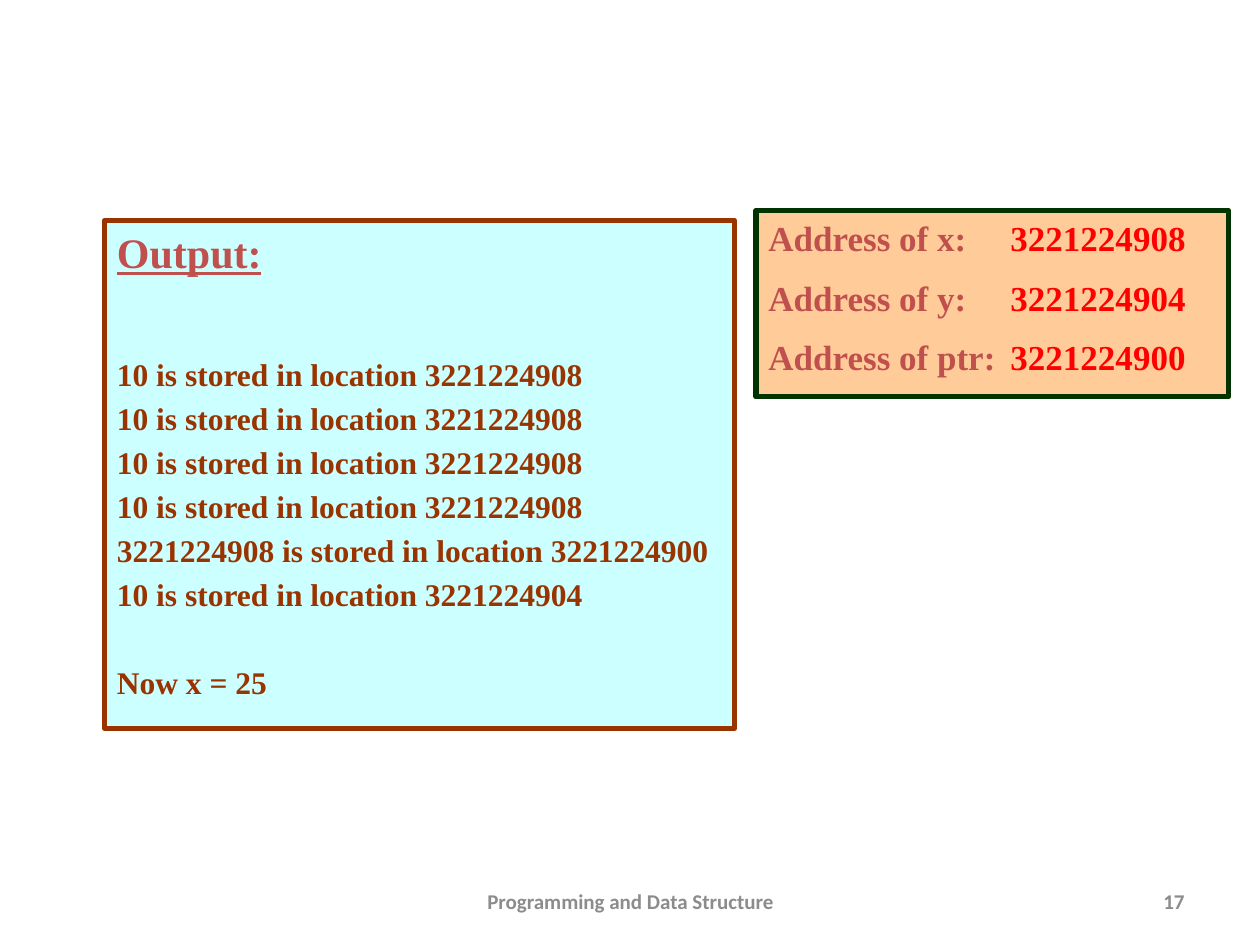
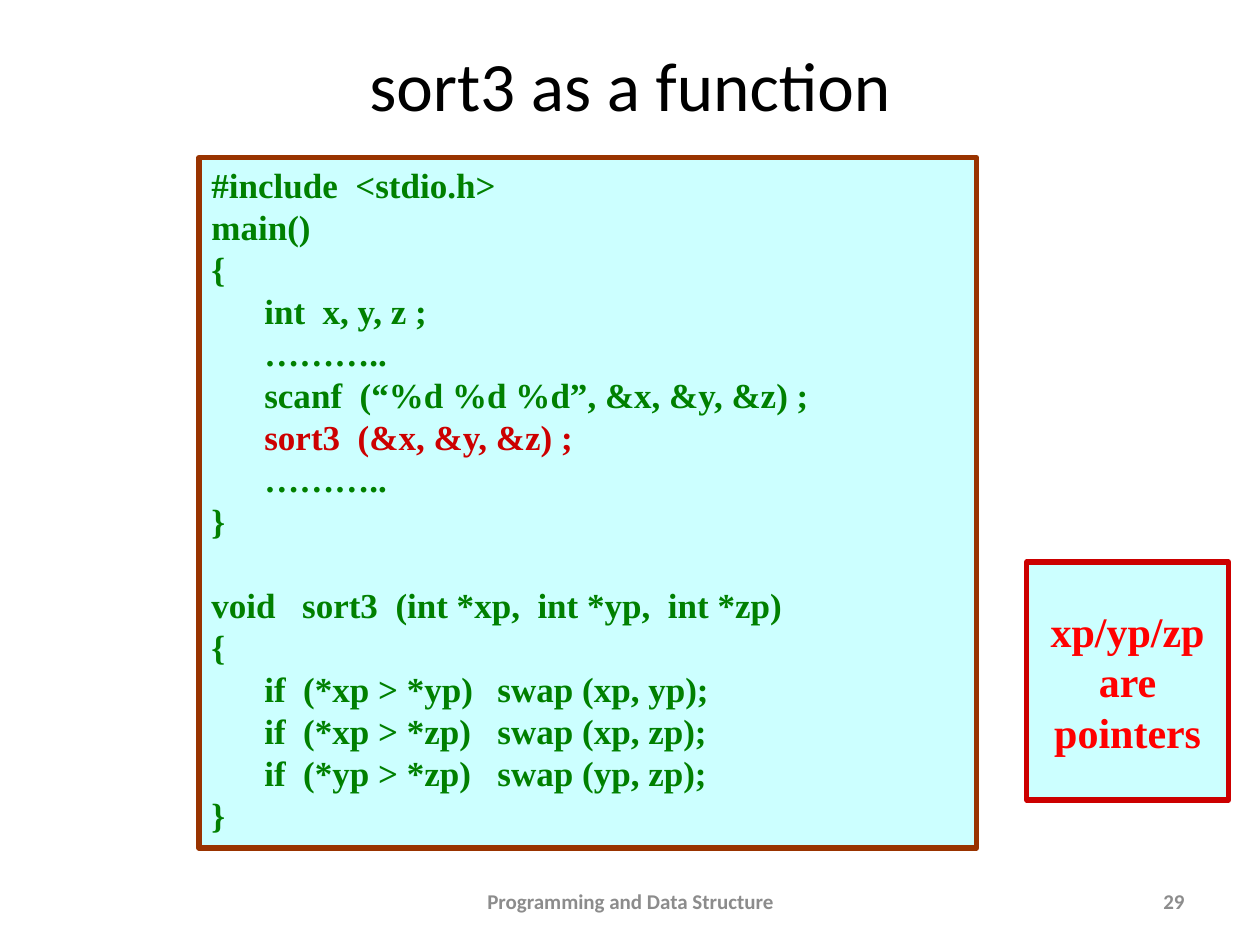
from lxml.etree import SubElement
from pptx import Presentation
from pptx.dml.color import RGBColor
from pptx.enum.shapes import MSO_SHAPE
from pptx.enum.text import MSO_ANCHOR as ANCHOR, MSO_AUTO_SIZE as AUTO_SIZE, PP_ALIGN as ALIGN
from pptx.oxml.ns import qn
from pptx.util import Inches, Pt

color = RGBColor.from_string

# Shared style
HEADING, BODY = "Calibri", "Times New Roman"
CYAN, PEACH = "CCFFFF", "FFCC99"
BROWN, DARK_GREEN, CODE_GREEN = "993300", "003300", "008000"
BRICK, RED, DARK_RED = "C0504D", "FF0000", "CC0000"
BLACK, GRAY = "000000", "8C8C8C"


def write(frame, *parts, size, font=BODY, bold=True, underline=False,
          align=ALIGN.LEFT, before=0, tabs=()):
    """Fill the next paragraph with (text, colour) parts."""
    paragraph = frame.paragraphs[-1]
    if paragraph.runs:
        paragraph = frame.add_paragraph()
    paragraph.alignment = align
    paragraph.space_before = Pt(before)
    if tabs:
        tab_list = SubElement(paragraph._p.get_or_add_pPr(), qn("a:tabLst"))
        for stop in tabs:
            SubElement(tab_list, qn("a:tab"), pos=str(Inches(stop)), algn="l")
    for text, text_color in parts:
        run = paragraph.add_run()
        run.text = text
        run.font.name = font
        run.font.size = Pt(size)
        run.font.bold = bold
        run.font.underline = underline
        run.font.color.rgb = color(text_color)


def add_box(slide, left, top, width, height, fill=None, line=None, anchor=ANCHOR.TOP, wrap=True):
    """Add a rectangle, framed if it has a fill, and return its text frame."""
    place = [Inches(length) for length in (left, top, width, height)]
    if fill:
        shape = slide.shapes.add_shape(MSO_SHAPE.RECTANGLE, *place)
        shape.shadow.inherit = False
        shape.fill.solid()
        shape.fill.fore_color.rgb = color(fill)
        shape.line.color.rgb = color(line)
        shape.line.width = Pt(3)
    else:
        shape = slide.shapes.add_textbox(*place)
    frame = shape.text_frame
    frame.word_wrap = wrap
    frame.vertical_anchor = anchor
    return frame


presentation = Presentation()
presentation.slide_width = Inches(10)
presentation.slide_height = Inches(7.5)
title_only, blank = presentation.slide_layouts[5], presentation.slide_layouts[6]
output_slide = presentation.slides.add_slide(blank)
sort_slide = presentation.slides.add_slide(title_only)

# Footers
for slide, number in ((output_slide, "17"), (sort_slide, "29")):
    for text, left, width, align in (
        ("Programming and Data Structure", 3.42, 3.17, ALIGN.CENTER),
        (number, 7.17, 2.33, ALIGN.RIGHT),
    ):
        footer = add_box(slide, left, 6.95, width, 0.4, anchor=ANCHOR.MIDDLE)
        write(footer, (text, GRAY), size=12, font=HEADING, align=align)

# Program output
output = add_box(output_slide, 0.83, 1.75, 5, 4.03, CYAN, BROWN)
write(output, ("Output:", BRICK), size=24, underline=True)
for text, before in (
    ("10 is stored in location 3221224908", 44.4),
    ("10 is stored in location 3221224908", 3.6),
    ("10 is stored in location 3221224908", 3.6),
    ("10 is stored in location 3221224908", 3.6),
    ("3221224908 is stored in location 3221224900", 3.6),
    ("10 is stored in location 3221224904", 3.6),
    ("Now x = 25", 28.8),
):
    write(output, (text, BROWN), size=18, before=before)

# Variable addresses
addresses = add_box(output_slide, 6, 1.67, 3.75, 1.48, PEACH, DARK_GREEN)
for index, (name, address) in enumerate(
    (("x", "3221224908"), ("y", "3221224904"), ("ptr", "3221224900"))
):
    write(addresses, (f"Address of {name}:", BRICK), (f"\t{address}", RED),
          size=20, before=10 if index else 0, tabs=(1.92,))

# Title of the sort slide
title = sort_slide.shapes.title
title.left, title.top = Inches(0.75), Inches(0.33)
title.width, title.height = Inches(8.5), Inches(0.67)
title.text_frame.auto_size = AUTO_SIZE.NONE
title.text_frame.vertical_anchor = ANCHOR.MIDDLE
write(title.text_frame, ("sort3 as a function", BLACK), size=39.6, font=HEADING,
      bold=False, align=ALIGN.CENTER)

# Code listing: tab stops set the indent and the column of the swap calls
code = add_box(sort_slide, 1.58, 1.25, 6.17, 5.48, CYAN, BROWN)
for text in (
    "#include  <stdio.h>",
    "main()",
    "{",
    "\tint  x, y, z ;",
    "\t………..",
    "\tscanf  (“%d %d %d”, &x, &y, &z) ;",
    "\tsort3  (&x, &y, &z) ;",
    "\t………..",
    "}",
    "void\tsort3  (int *xp,  int *yp,  int *zp)",
    "{",
    "\tif  (*xp > *yp)\tswap (xp, yp);",
    "\tif  (*xp > *zp)\tswap (xp, zp);",
    "\tif  (*yp > *zp)\tswap (yp, zp);",
    "}",
):
    is_header = text.startswith("void")
    is_call = text.startswith("\tsort3")
    write(code, (text, DARK_RED if is_call else CODE_GREEN), size=20,
          before=24 if is_header else 0, tabs=(0.72,) if is_header else (0.42, 2.27))

# Note on the parameters
note = add_box(sort_slide, 8.15, 4.46, 1.6, 1.89, CYAN, DARK_RED, ANCHOR.MIDDLE, wrap=False)
for text in ("xp/yp/zp", "are", "pointers"):
    write(note, (text, RED), size=24, align=ALIGN.CENTER)

presentation.save("out.pptx")
